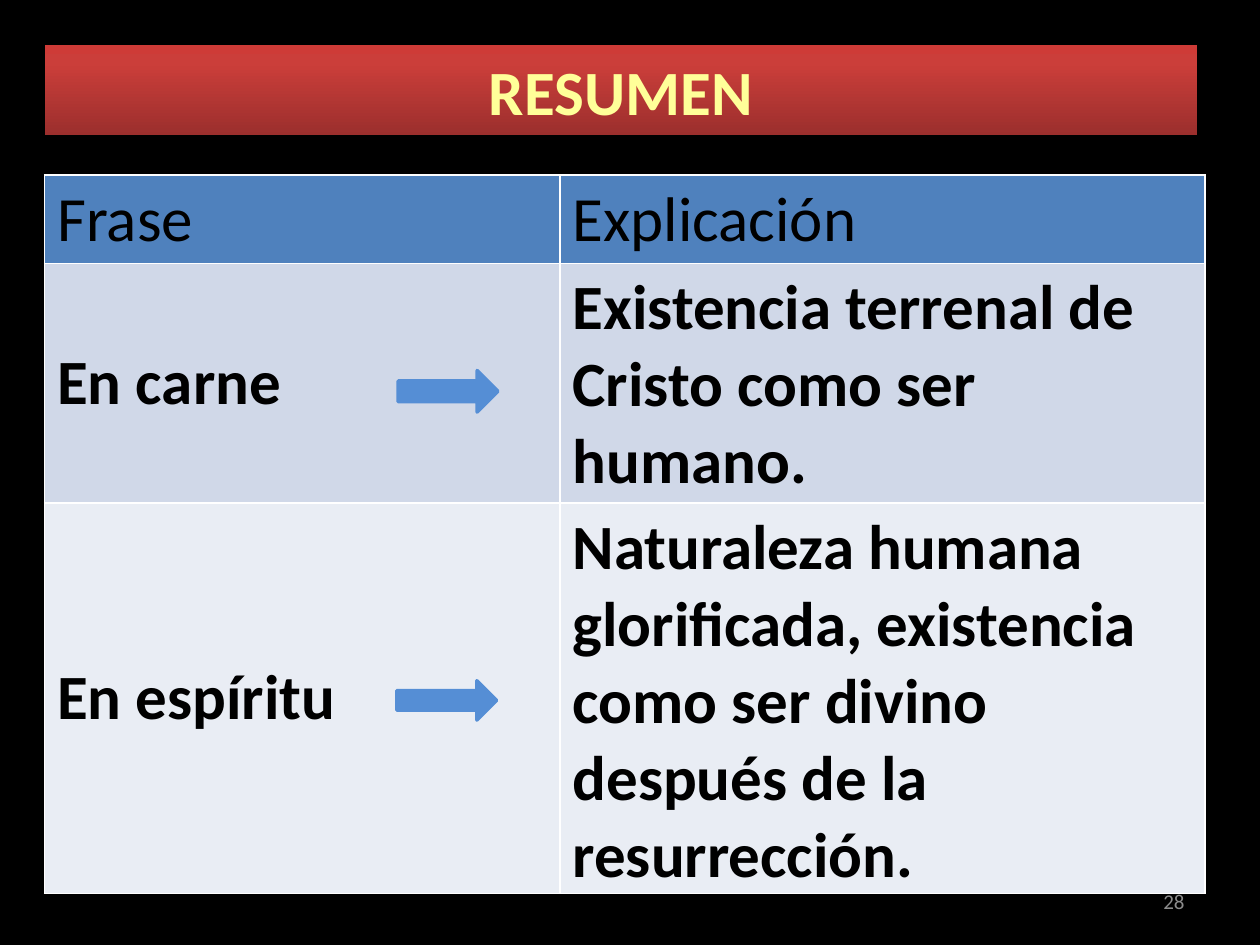
from lxml import etree
from pptx import Presentation
from pptx.dml.color import RGBColor
from pptx.enum.shapes import MSO_SHAPE
from pptx.enum.text import MSO_ANCHOR, PP_ALIGN
from pptx.oxml import parse_xml
from pptx.util import Pt

RECT, ARROW = MSO_SHAPE.RECTANGLE, MSO_SHAPE.RIGHT_ARROW
MIDDLE = MSO_ANCHOR.MIDDLE
LEFT, CENTER, RIGHT = PP_ALIGN.LEFT, PP_ALIGN.CENTER, PP_ALIGN.RIGHT
NS = "http://schemas.openxmlformats.org/drawingml/2006/main"


def rgb(value):
    return RGBColor.from_string(value)


def write(tf, text, align, size, color, bold=False):
    tf.word_wrap = True
    p = tf.paragraphs[0]
    p.alignment = align
    r = p.add_run()
    r.text = text
    r.font.color.rgb = rgb(color)
    for name, value in {"name": "Calibri", "size": Pt(size), "bold": bold}.items():
        setattr(r.font, name, value)
    return r


prs = Presentation()
prs.slide_width, prs.slide_height = Pt(720), Pt(540)
s = prs.slides.add_slide(prs.slide_layouts[6])
s.background.fill.solid()
s.background.fill.fore_color.rgb = rgb("000000")

# Title bar with a gradient running upwards
bar = s.shapes.add_shape(RECT, Pt(25.5), Pt(26), Pt(658.5), Pt(51))
bar.shadow.inherit = False
bar.line.fill.background()
bar.fill.gradient()
bar.fill.gradient_angle = 90
stops = bar.fill._fill._gradFill.find(f"{{{NS}}}gsLst")
for stop in list(stops):
    stops.remove(stop)
for position, color in [(0, "9C2F2D"), (80, "CB3E3A"), (100, "CE3B37")]:
    stop = etree.SubElement(stops, f"{{{NS}}}gs", pos=str(position * 1000))
    etree.SubElement(stop, f"{{{NS}}}srgbClr", val=color)
bar.text_frame.vertical_anchor = MIDDLE
r = write(bar.text_frame, "RESUMEN", CENTER, 36, "FFFF99", True)
r.font._element.insert(0, parse_xml(
    f'<a:ln xmlns:a="{NS}" w="9000"><a:solidFill><a:srgbClr val="FFFF00"/>'
    "</a:solidFill></a:ln>"))

# Slide number
box = s.shapes.add_textbox(Pt(516), Pt(500.5), Pt(168), Pt(28.75))
box.text_frame.vertical_anchor = MIDDLE
write(box.text_frame, "28", RIGHT, 12, "8C8C8C")

# Table of phrases and explanations
rows = [
    (50.5, "4F81BD", "Frase", "Explicación"),
    (135, "D0D8E8", "En carne", "Existencia terrenal de Cristo como ser humano."),
    (220, "E9EDF4", "En espíritu",
     "Naturaleza humana glorificada, existencia como ser divino "
     "después de la resurrección."),
]
table = s.shapes.add_table(
    len(rows), 2, Pt(25.5), Pt(100), Pt(663), Pt(405.5)).table
for column, width in zip(table.columns, (294.5, 368.5)):
    column.width = Pt(width)
for i, (height, fill, *texts) in enumerate(rows):
    table.rows[i].height = Pt(height)
    for j, text in enumerate(texts):
        cell = table.cell(i, j)
        cell.vertical_anchor = MIDDLE
        write(cell.text_frame, text, LEFT, 36, "000000", i > 0)
        tc_pr = cell._tc.get_or_add_tcPr()
        for side in ("lnL", "lnR", "lnT", "lnB"):
            tc_pr.append(parse_xml(
                f'<a:{side} xmlns:a="{NS}" w="12700"><a:solidFill>'
                f'<a:srgbClr val="FFFFFF"/></a:solidFill></a:{side}>'))
        cell.fill.solid()
        cell.fill.fore_color.rgb = rgb(fill)

# Arrows from phrase to explanation
for left, top, height in [(227.5, 211.75, 23.75), (226.75, 389, 22.5)]:
    arrow = s.shapes.add_shape(ARROW, Pt(left), Pt(top), Pt(57), Pt(height))
    arrow.shadow.inherit = False
    arrow.fill.solid()
    arrow.fill.fore_color.rgb = rgb("558ED5")
    arrow.line.color.rgb = rgb("558ED5")
    arrow.line.width = Pt(2)

prs.save("out.pptx")
